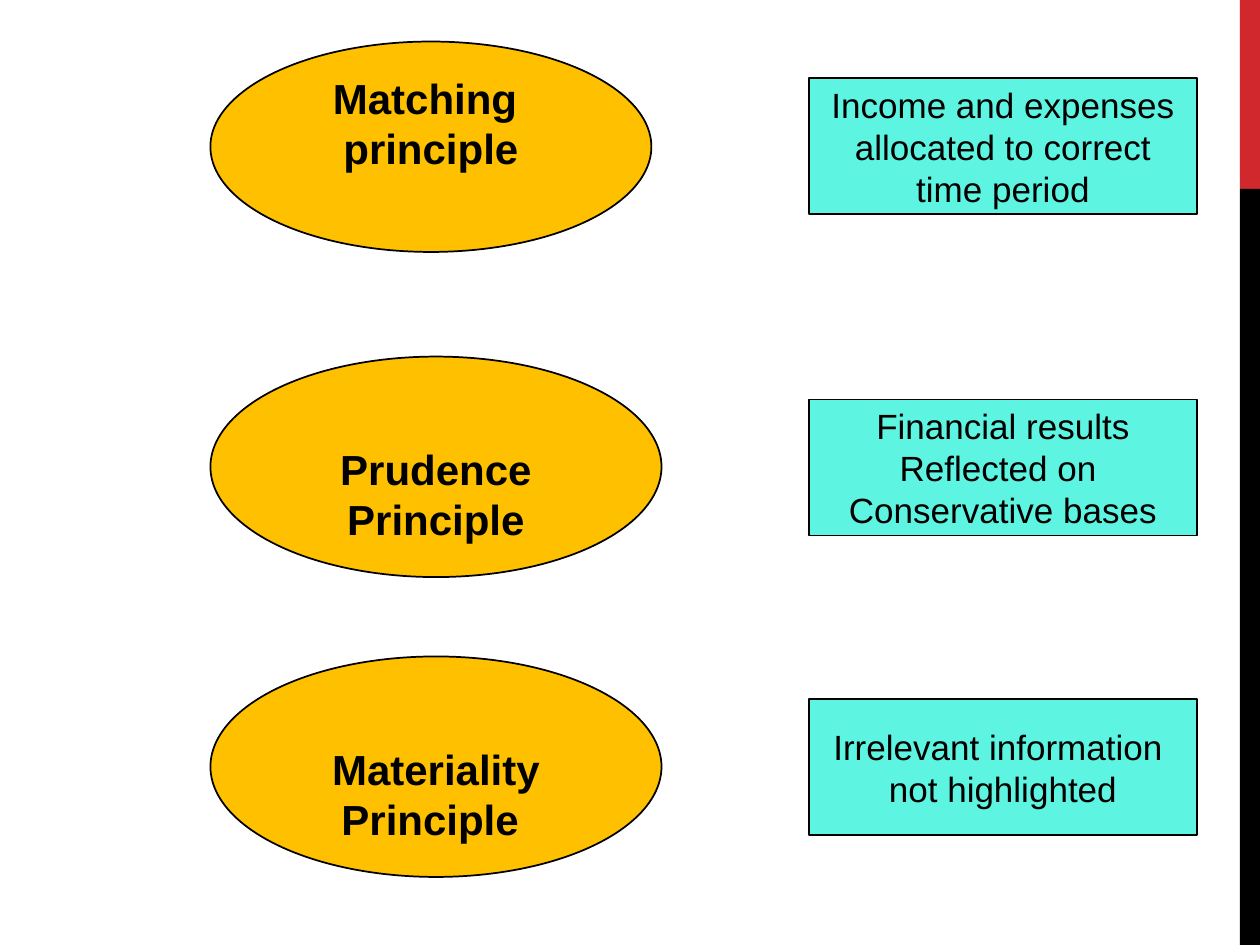
from pptx import Presentation
from pptx.dml.color import RGBColor
from pptx.enum.shapes import MSO_SHAPE as Shape
from pptx.enum.text import MSO_ANCHOR as Anchor, PP_ALIGN as Align
from pptx.util import Inches, Pt

COLORS = {
    "red": "D1282E",
    "black": "000000",
    "aqua": "5EF4E2",
    "amber": "FFC000",
}


class PrinciplesPage:
    font = "Arial"

    def __init__(self, deck):
        self.page = deck.slides.add_slide(deck.slide_layouts[6])

    def color(self, name):
        return RGBColor.from_string(COLORS[name])

    def shape(self, kind, left, top, width, height, fill):
        shape = self.page.shapes.add_shape(
            kind, Inches(left), Inches(top), Inches(width), Inches(height))
        shape.shadow.inherit = False
        shape.fill.solid()
        shape.fill.fore_color.rgb = self.color(fill)
        return shape

    def side_bar(self, top, height, fill):
        bar = self.shape(Shape.RECTANGLE, 9.84, top, 0.16, height, fill)
        bar.line.fill.background()

    def label(self, box, text, size, bold=False):
        """Outline the box and centre one paragraph per line of text in it."""
        box.line.color.rgb = self.color("black")
        box.line.width = Pt(1)
        frame = box.text_frame
        frame.word_wrap = False
        frame.vertical_anchor = Anchor.MIDDLE
        frame.text = text
        for para in frame.paragraphs:
            para.alignment = Align.CENTER
            for span in para.runs:
                span.font.name = self.font
                span.font.size = Pt(size)
                span.font.bold = bold
                span.font.color.rgb = self.color("black")

    def meaning(self, top, text):
        box = self.shape(Shape.RECTANGLE, 6.42, top, 3.08, 1.08, "aqua")
        self.label(box, text, 20)

    def principle(self, top, width, height, text, above, below):
        """Draw an ellipse whose top and bottom margins shift its text."""
        oval = self.shape(Shape.OVAL, 1.67, top, width, height, "amber")
        self.label(oval, text, 24, bold=True)
        oval.text_frame.margin_top = Inches(above)
        oval.text_frame.margin_bottom = Inches(below)


def main():
    deck = Presentation()
    deck.slide_width, deck.slide_height = Inches(10), Inches(7.5)
    page = PrinciplesPage(deck)

    page.side_bar(0, 1.5, "red")
    page.side_bar(1.5, 6, "black")

    page.meaning(0.62, "Income and expenses\nallocated to correct\ntime period")
    page.meaning(3.17, "Financial results\nReflected on \nConservative bases")
    page.meaning(5.55, "Irrelevant information \nnot highlighted")

    page.principle(0.33, 3.5, 1.67, "Matching \nprinciple", 0, 0.38)
    page.principle(2.83, 3.58, 1.75, "Prudence\nPrinciple", 0.43, 0)
    page.principle(5.21, 3.58, 1.75, "Materiality\nPrinciple ", 0.43, 0)

    deck.save("out.pptx")


if __name__ == "__main__":
    main()
